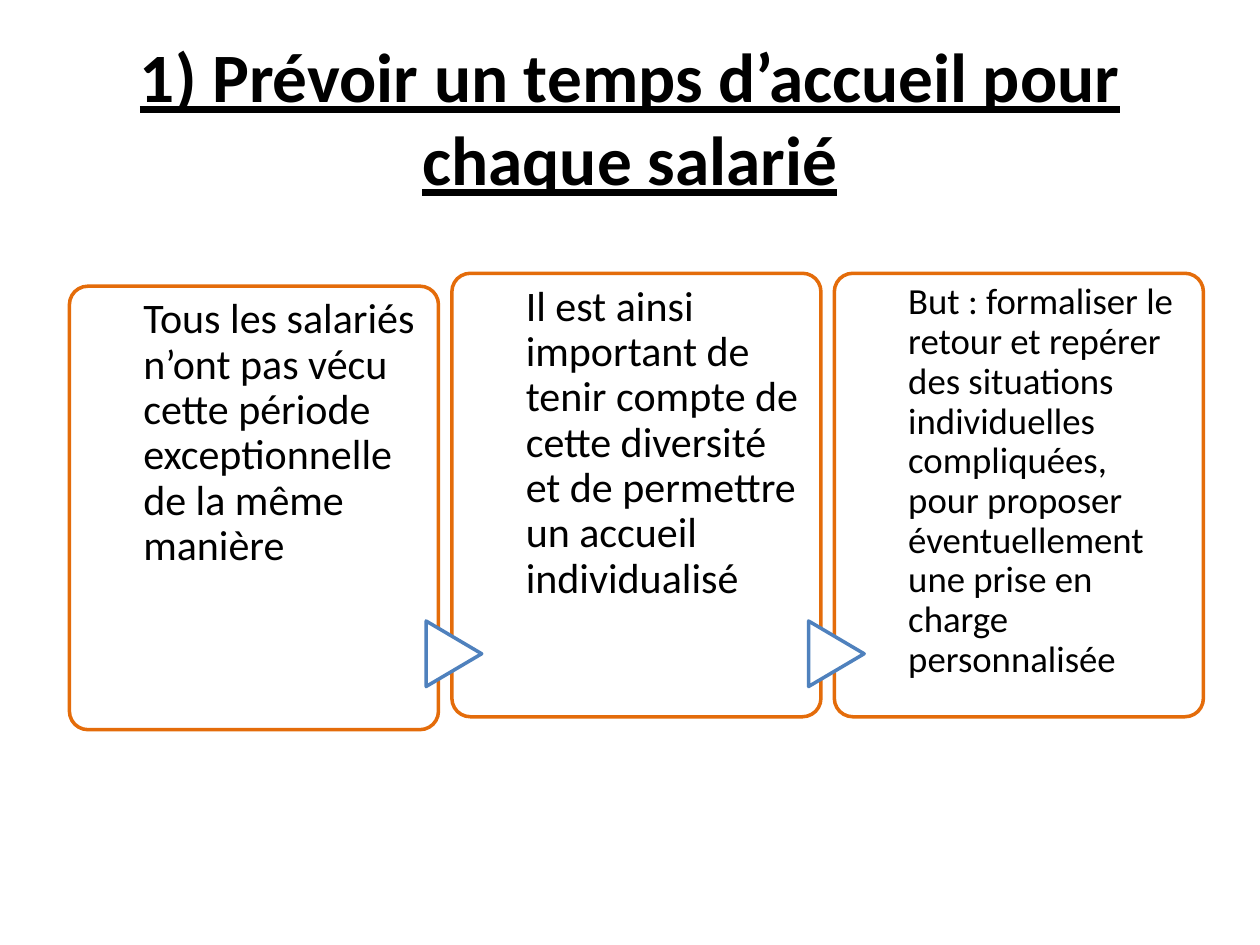
"""Build the slide on planning a welcome time for each employee."""
import pptx
import pptx.dml.color
import pptx.enum.shapes
import pptx.enum.text
import pptx.util

Cm = pptx.util.Cm
Pt = pptx.util.Pt
RGBColor = pptx.dml.color.RGBColor
MSO_SHAPE = pptx.enum.shapes.MSO_SHAPE
MSO_ANCHOR = pptx.enum.text.MSO_ANCHOR
PP_ALIGN = pptx.enum.text.PP_ALIGN

TITLE = "1) Prévoir un temps d’accueil pour chaque salarié"
CARDS = [
    {"text": "Tous les salariés n’ont pas vécu cette période exceptionnelle de la même manière",
     "size": 24, "top": 5.77, "inset": 0.23},
    {"text": "Il est ainsi important de tenir compte de cette diversité et de permettre un accueil individualisé",
     "size": 24, "top": 5.51, "inset": 0.23},
    {"text": "But : formaliser le retour et repérer des situations individuelles compliquées, "
             "pour proposer éventuellement une prise en charge personnalisée",
     "size": 21, "top": 5.51, "inset": 0.2},
]

BLACK = RGBColor(0x00, 0x00, 0x00)
WHITE = RGBColor(0xFF, 0xFF, 0xFF)
ORANGE = RGBColor(0xE4, 0x6C, 0x0A)
BLUE = RGBColor(0x4F, 0x81, 0xBD)

CARD_LEFT, CARD_WIDTH, CARD_HEIGHT, CARD_STEP = 1.4, 7.44, 8.94, 7.71
TEXT_OFFSET, TEXT_WIDTH = 1.49, 5.54
ARROW_OFFSET, ARROW_TOP, ARROW_WIDTH, ARROW_HEIGHT = -0.62, 12.62, 1.32, 1.12


def add_text(slide, text, box, *, size, bold=False, underline=False, align=PP_ALIGN.LEFT,
             anchor=MSO_ANCHOR.TOP, insets=(0.25, 0.13, 0.25, 0.13), line_spacing=1.0):
    """Add a wrapped text box; box and insets are in centimetres."""
    frame = slide.shapes.add_textbox(*map(Cm, box)).text_frame
    frame.word_wrap = True
    frame.vertical_anchor = anchor
    (frame.margin_left, frame.margin_top,
     frame.margin_right, frame.margin_bottom) = map(Cm, insets)
    paragraph = frame.paragraphs[0]
    paragraph.alignment = align
    paragraph.line_spacing = line_spacing
    run = paragraph.add_run()
    run.text = text
    run.font.name = "Calibri"
    run.font.size = Pt(size)
    run.font.bold = bold
    run.font.underline = underline
    run.font.color.rgb = BLACK


def add_outlined_shape(slide, kind, box, color):
    """Add a white shape with a coloured outline; box is in centimetres."""
    shape = slide.shapes.add_shape(kind, *map(Cm, box))
    shape.shadow.inherit = False
    shape.fill.solid()
    shape.fill.fore_color.rgb = WHITE
    shape.line.color.rgb = color
    shape.line.width = Pt(2)
    return shape


def main():
    """Create and save the presentation."""
    presentation = pptx.Presentation()
    presentation.slide_width, presentation.slide_height = Cm(25.4), Cm(19.05)
    slide = presentation.slides.add_slide(presentation.slide_layouts[6])

    add_text(slide, TITLE, (1.27, 0.76, 22.86, 3.18), size=39.6, bold=True, underline=True,
             align=PP_ALIGN.CENTER, anchor=MSO_ANCHOR.MIDDLE)

    for index, card in enumerate(CARDS):
        left = CARD_LEFT + index * CARD_STEP
        outline = add_outlined_shape(slide, MSO_SHAPE.ROUNDED_RECTANGLE,
                                     (left, card["top"], CARD_WIDTH, CARD_HEIGHT), ORANGE)
        outline.adjustments[0] = 0.05
        if index > 0:
            arrow = add_outlined_shape(slide, MSO_SHAPE.FLOWCHART_EXTRACT,
                                       (left + ARROW_OFFSET, ARROW_TOP, ARROW_WIDTH, ARROW_HEIGHT), BLUE)
            arrow.rotation = 90
        add_text(slide, card["text"], (left + TEXT_OFFSET, card["top"], TEXT_WIDTH, CARD_HEIGHT),
                 size=card["size"], insets=(0, card["inset"], 0, 0), line_spacing=0.9)

    presentation.save("out.pptx")


if __name__ == "__main__":
    main()
